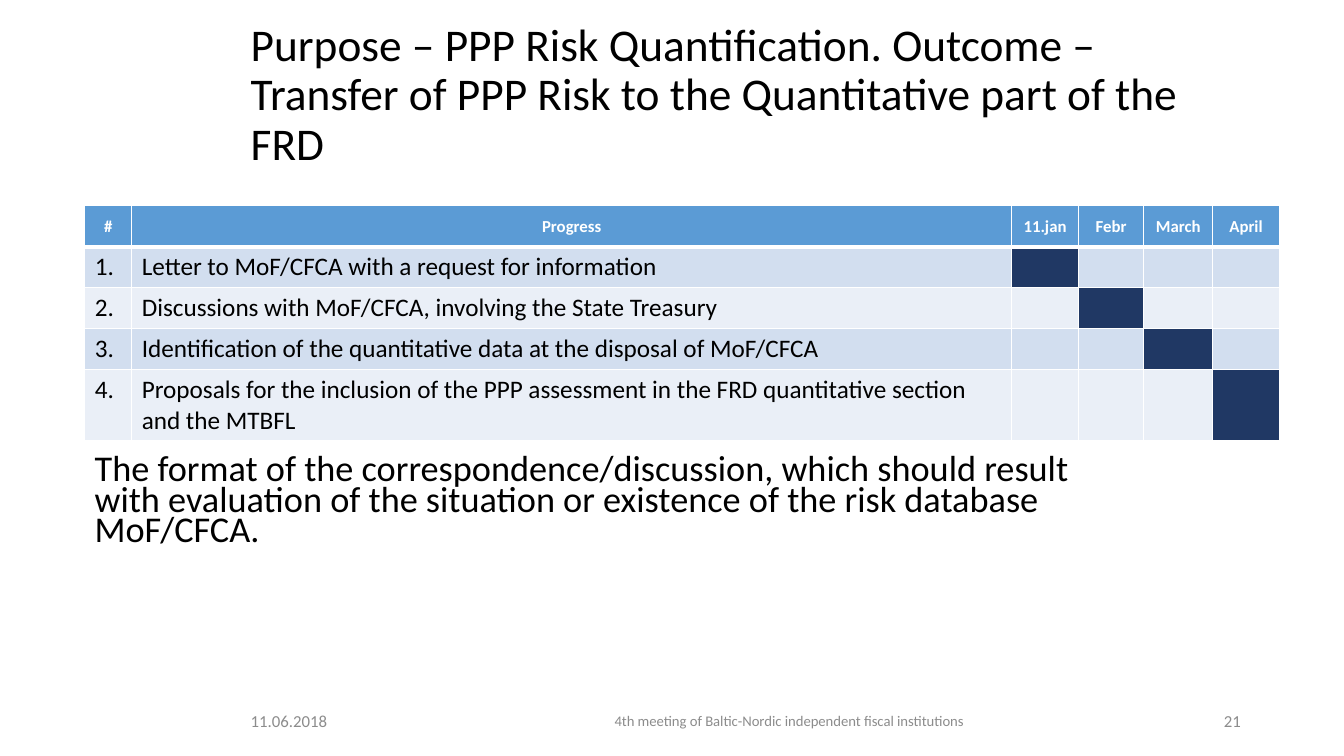
import pptx
import pptx.dml.color
import pptx.enum.text
import pptx.util
import lxml.etree

Pt = pptx.util.Pt
ALIGN = pptx.enum.text.PP_ALIGN
MIDDLE = pptx.enum.text.MSO_ANCHOR.MIDDLE
TOP = pptx.enum.text.MSO_ANCHOR.TOP
DRAWING = "{http://schemas.openxmlformats.org/drawingml/2006/main}"

BLACK, WHITE, GREY = "000000", "FFFFFF", "8C8C8C"
HEADER_BLUE, SCHEDULED = "5B9BD5", "203864"
BANDS = ["D2DEEF", "EAEFF7"]


def color(code):
    return pptx.dml.color.RGBColor.from_string(code)


def apply(target, values):
    for name, value in values.items():
        setattr(target, name, value)


class SlideBuilder:
    font = "Calibri"

    def __init__(self, page):
        self.page = page

    def paragraph(self, frame, words, size, ink, bold=False, **layout):
        """Fill a text frame with one styled paragraph."""
        para = frame.paragraphs[0]
        apply(para, layout)
        span = para.add_run()
        span.text = words
        apply(span.font, {"name": self.font, "size": Pt(size), "bold": bold})
        span.font.color.rgb = color(ink)

    def text(self, left, top, width, height, words, size, ink, anchor=MIDDLE, **layout):
        box = self.page.shapes.add_textbox(Pt(left), Pt(top), Pt(width), Pt(height))
        apply(box.text_frame, {"word_wrap": True, "vertical_anchor": anchor})
        self.paragraph(box.text_frame, words, size, ink, **layout)

    def borders(self, cell, widths):
        properties = cell._tc.get_or_add_tcPr()
        for side, width in zip("LRTB", widths):
            line = lxml.etree.SubElement(properties, f"{DRAWING}ln{side}", w=str(Pt(width)))
            fill = lxml.etree.SubElement(line, f"{DRAWING}solidFill")
            lxml.etree.SubElement(fill, f"{DRAWING}srgbClr", val=WHITE)

    def fill(self, cell, code):
        cell.fill.solid()
        cell.fill.fore_color.rgb = color(code)

    def schedule(self, left, top, columns, row_height, headings, tasks):
        """Draw a timetable in which each task takes the next month."""
        count = len(tasks) + 1
        table = self.page.shapes.add_table(
            count, len(columns), Pt(left), Pt(top), Pt(sum(columns)), Pt(row_height * count)
        ).table
        for column, width in zip(table.columns, columns):
            column.width = Pt(width)
        for row in table.rows:
            row.height = Pt(row_height)

        # Header row
        for index, heading in enumerate(headings):
            cell = table.cell(0, index)
            self.borders(cell, [1, 1, 1, 3])
            self.fill(cell, HEADER_BLUE)
            apply(cell, {"vertical_anchor": MIDDLE, "margin_left": Pt(0.72),
                         "margin_right": Pt(0.72), "margin_top": Pt(0.72), "margin_bottom": 0})
            self.paragraph(cell.text_frame, heading, 12, WHITE, bold=True, alignment=ALIGN.CENTER)

        # Task rows
        for number, task in enumerate(tasks, start=1):
            for index in range(len(columns)):
                cell = table.cell(number, index)
                self.borders(cell, [1, 1, 3 if number == 1 else 1, 1])
                scheduled = index == number + 1
                self.fill(cell, SCHEDULED if scheduled else BANDS[(number - 1) % 2])
            for index, words in enumerate([f"{number}.", task]):
                self.paragraph(table.cell(number, index).text_frame, words, 18, BLACK)


def main():
    deck = pptx.Presentation()
    apply(deck, {"slide_width": Pt(960), "slide_height": Pt(540)})
    slide = SlideBuilder(deck.slides.add_slide(deck.slide_layouts[6]))

    # Title
    slide.text(172, 28.8, 721.5, 80,
               "Purpose – PPP Risk Quantification. Outcome – Transfer of PPP Risk "
               "to the Quantitative part of the FRD",
               32.4, BLACK, line_spacing=0.9)

    # Timetable
    slide.schedule(
        60.5, 147, [33.6, 628.6, 47.6, 46.8, 49.2, 47.6], 29.3,
        ["#", "Progress", "11.jan", "Febr", "March", "April"],
        ["Letter to MoF/CFCA with a request for information",
         "Discussions with MoF/CFCA, involving the State Treasury",
         "Identification of the quantitative data at the disposal of MoF/CFCA",
         "Proposals for the inclusion of the PPP assessment in the FRD "
         "quantitative section and the MTBFL"])

    # Remark below the timetable
    slide.text(60.5, 323.3, 721.5, 76.3,
               "The format of the correspondence/discussion, which should result with "
               "evaluation of the situation or existence of the risk database MoF/CFCA.",
               25.9, BLACK, anchor=TOP, line_spacing=0.7)

    # Footer
    footer = [
        (172, 118, "11.06.2018", 12, ALIGN.LEFT),
        (310.3, 507, "4th meeting of Baltic-Nordic independent fiscal institutions", 10.5, ALIGN.CENTER),
        (836.6, 56.9, "21", 12, ALIGN.RIGHT),
    ]
    for left, width, words, size, alignment in footer:
        slide.text(left, 500.5, width, 28.8, words, size, GREY, alignment=alignment)

    deck.save("out.pptx")


if __name__ == "__main__":
    main()
